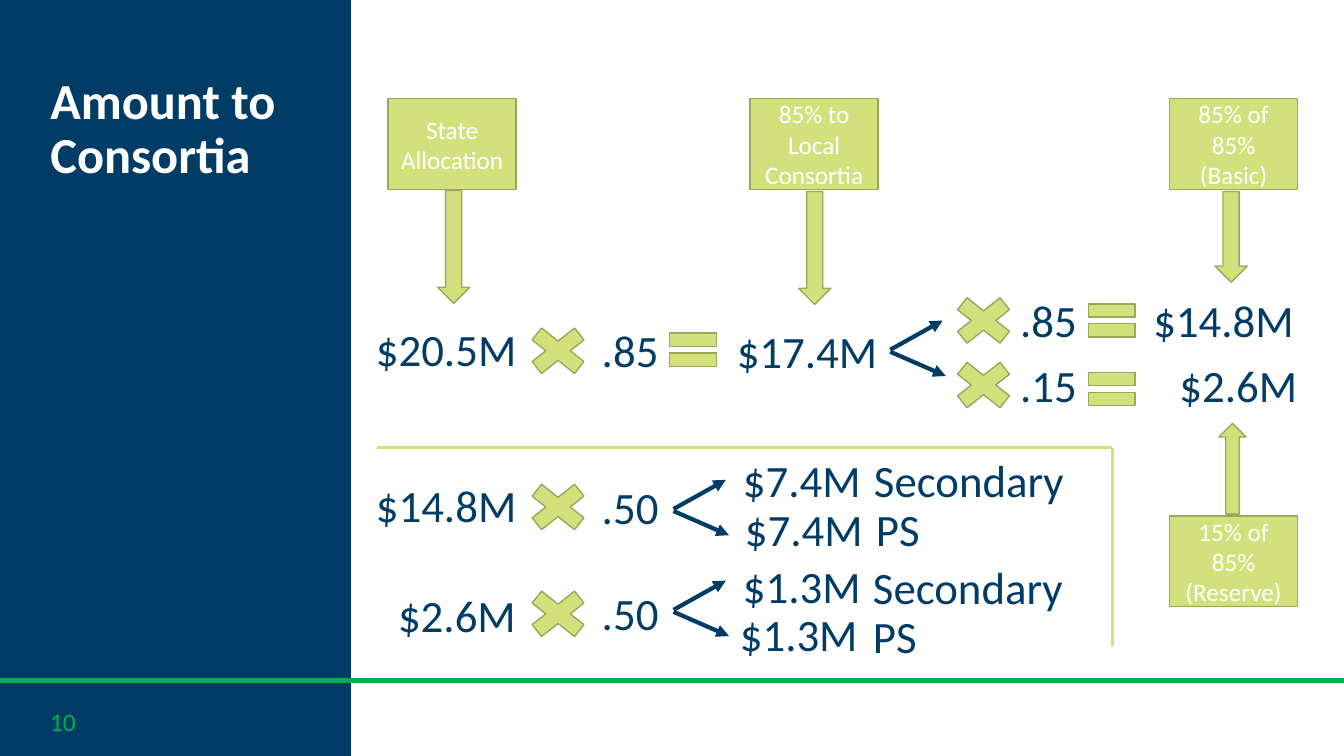
from lxml import etree
from pptx import Presentation
from pptx.dml.color import RGBColor
from pptx.enum.shapes import MSO_CONNECTOR, MSO_SHAPE as Shape
from pptx.enum.text import MSO_ANCHOR as Anchor, PP_ALIGN as Align
from pptx.oxml.ns import qn
from pptx.util import Inches, Pt

NAVY = RGBColor(0x00, 0x3C, 0x66)
GREEN = RGBColor(0x00, 0xB0, 0x50)
LIME = RGBColor(0xD3, 0xE1, 0x7D)
OLIVE = RGBColor(0x9C, 0xA6, 0x5C)
WHITE = RGBColor(0xFF, 0xFF, 0xFF)
FONT = "Calibri"


class SlideBuilder:
    """Draws styled elements on one slide; all lengths are in inches."""

    def __init__(self, slide):
        self.slide = slide
        self.shapes = slide.shapes

    def add_run(self, paragraph, text, size, color, bold=False):
        run = paragraph.add_run()
        run.text = text
        run.font.name = FONT
        run.font.size = Pt(size)
        run.font.color.rgb = color
        run.font.bold = bold

    def title(self, text, left, top, width, height):
        title = self.shapes.title
        title.left, title.top = Inches(left), Inches(top)
        title.width, title.height = Inches(width), Inches(height)
        frame = title.text_frame
        frame.word_wrap = True
        frame.vertical_anchor = Anchor.TOP
        paragraph = frame.paragraphs[0]
        paragraph.alignment = Align.LEFT
        paragraph.line_spacing = 0.9
        self.add_run(paragraph, text, 36, WHITE, bold=True)
        # Bring the title in front of the side band
        title.element.getparent().append(title.element)

    def text(self, text, left, top, width=1.73, height=0.64, size=32, color=NAVY):
        box = self.shapes.add_textbox(
            Inches(left), Inches(top), Inches(width), Inches(height))
        box.text_frame.word_wrap = True
        self.add_run(box.text_frame.paragraphs[0], text, size, color)

    def shape(self, kind, left, top, width, height, fill=LIME, outline=OLIVE):
        shape = self.shapes.add_shape(
            kind, Inches(left), Inches(top), Inches(width), Inches(height))
        shape.shadow.inherit = False
        shape.fill.solid()
        shape.fill.fore_color.rgb = fill
        if outline is None:
            shape.line.fill.background()
        else:
            shape.line.color.rgb = outline
            shape.line.width = Pt(1)
        return shape

    def label(self, text, left, top):
        frame = self.shape(Shape.RECTANGLE, left, top, 1.27, 0.9).text_frame
        frame.word_wrap = True
        frame.vertical_anchor = Anchor.MIDDLE
        paragraph = frame.paragraphs[0]
        paragraph.alignment = Align.CENTER
        self.add_run(paragraph, text, 18, WHITE)

    def times(self, left, top):
        self.shape(Shape.MATH_MULTIPLY, left, top, 0.81, 0.64)

    def equals(self, left, top):
        self.shape(Shape.MATH_EQUAL, left, top, 0.63, 0.56)

    def line(self, start, end, color, width, arrow=False):
        connector = self.shapes.add_connector(
            MSO_CONNECTOR.STRAIGHT, *map(Inches, start + end))
        connector.line.color.rgb = color
        connector.line.width = Pt(width)
        properties = connector.element.spPr
        if arrow:
            outline = properties.find(qn("a:ln"))
            etree.SubElement(outline, qn("a:tailEnd"), type="triangle")
        etree.SubElement(properties, qn("a:effectLst"))

    def fork(self, left, top):
        self.line((left, top), (left + 0.52, top - 0.29), NAVY, 3, arrow=True)
        self.line((left, top + 0.02), (left + 0.55, top + 0.26), NAVY, 3, arrow=True)


def main():
    presentation = Presentation()
    presentation.slide_width = Inches(13.33)
    presentation.slide_height = Inches(7.5)
    builder = SlideBuilder(presentation.slides.add_slide(presentation.slide_layouts[5]))

    # Side band, footer line, title and page number
    builder.shape(Shape.RECTANGLE, 0, 0, 3.48, 7.5, fill=NAVY, outline=None)
    builder.line((13.33, 6.75), (0, 6.75), GREEN, 3)
    builder.title("Amount to Consortia", 0.4, 0.7, 3.09, 2)
    builder.text("10", 0.4, 6.96, 2.17, 0.4, size=18, color=GREEN)

    # State allocation to local consortia
    builder.text("$20.5M", 3.63, 3.14)
    builder.times(5.13, 3.16)
    builder.text(".85", 5.87, 3.15)
    builder.equals(6.56, 3.19)
    builder.text("$17.4M", 7.21, 3.16)
    builder.fork(8.83, 3.47)

    # Basic and reserve shares
    for share, amount, amount_left, top, equals_top in (
            (".85", "$14.8M", 11.34, 2.86, 2.9),
            (".15", "$2.6M", 11.6, 3.5, 3.58)):
        builder.times(9.35, top)
        builder.text(share, 10.02, top)
        builder.equals(10.71, equals_top)
        builder.text(amount, amount_left, top)

    # Labels with their block arrows
    for text, left, top in (
            ("State Allocation", 3.85, 0.98),
            ("85% to Local Consortia", 7.44, 0.98),
            ("85% of 85% (Basic)", 11.6, 0.98),
            ("15% of 85% (Reserve)", 11.6, 5.12)):
        builder.label(text, left, top)
    for left, top, height in ((4.34, 1.89, 1.12), (7.92, 1.9, 1.12), (12.05, 1.9, 0.9)):
        builder.shape(Shape.DOWN_ARROW, left, top, 0.32, height)
    reserve_arrow = builder.shape(Shape.DOWN_ARROW, 12.09, 4.2, 0.27, 0.9)
    reserve_arrow.rotation = 180

    # Even split between secondary and PS
    for total, left, top, times_top, half_top, fork_top in (
            ("$14.8M", 3.63, 4.69, 4.71, 4.71, 5.05),
            ("$2.6M", 3.85, 5.78, 5.77, 5.76, 6.05)):
        builder.text(total, left, top)
        builder.times(5.13, times_top)
        builder.text(".50", 5.87, half_top)
        builder.fork(6.68, fork_top)
    for amount, left, top, group, group_left, group_top in (
            ("$7.4M", 7.27, 4.44, "Secondary", 8.57, 4.44),
            ("$7.4M", 7.29, 4.93, "PS", 8.59, 4.93),
            ("$1.3M", 7.27, 5.49, "Secondary", 8.56, 5.5),
            ("$1.3M", 7.24, 5.97, "PS", 8.56, 5.99)):
        builder.text(amount, left, top)
        builder.text(group, group_left, group_top, width=2.16)

    # Border around the split
    corner = (11.03, 4.44)
    builder.line((3.74, 4.44), corner, LIME, 2.25)
    builder.line(corner, (11.03, 6.41), LIME, 2.25)

    presentation.save("out.pptx")


if __name__ == "__main__":
    main()
